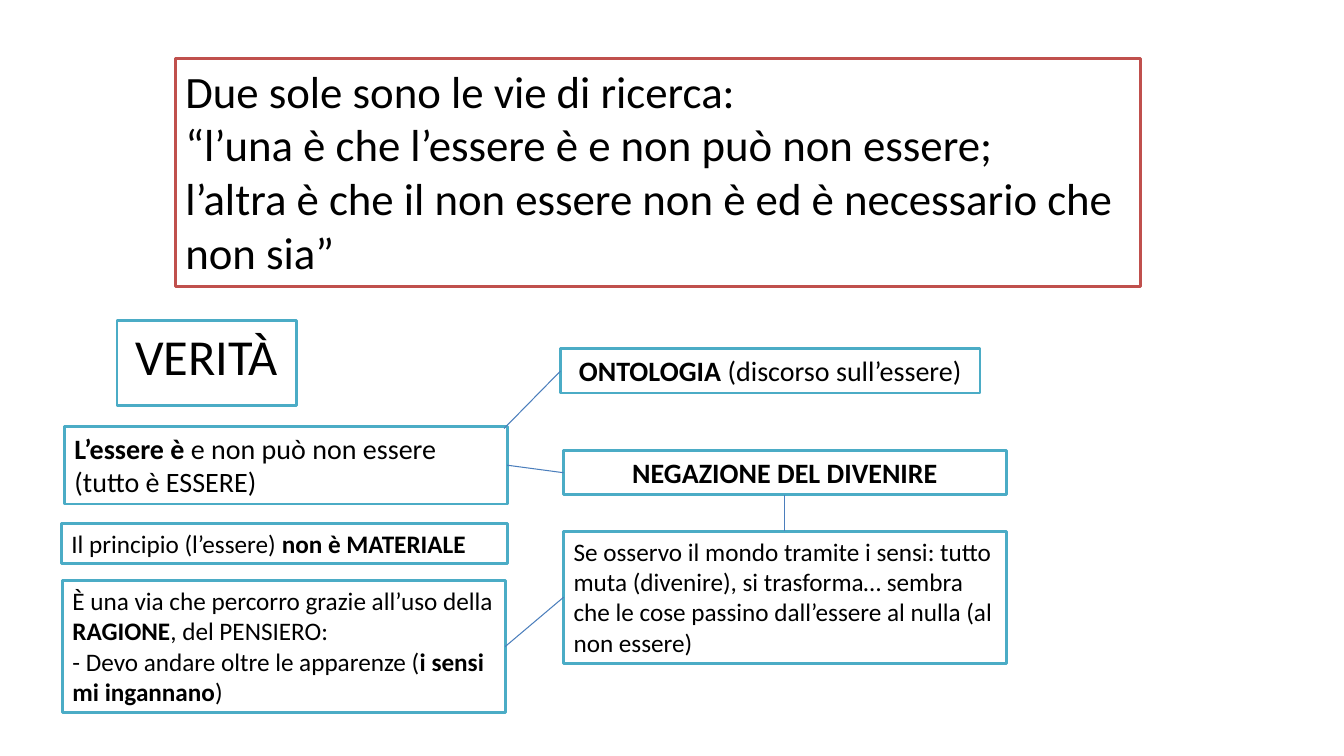
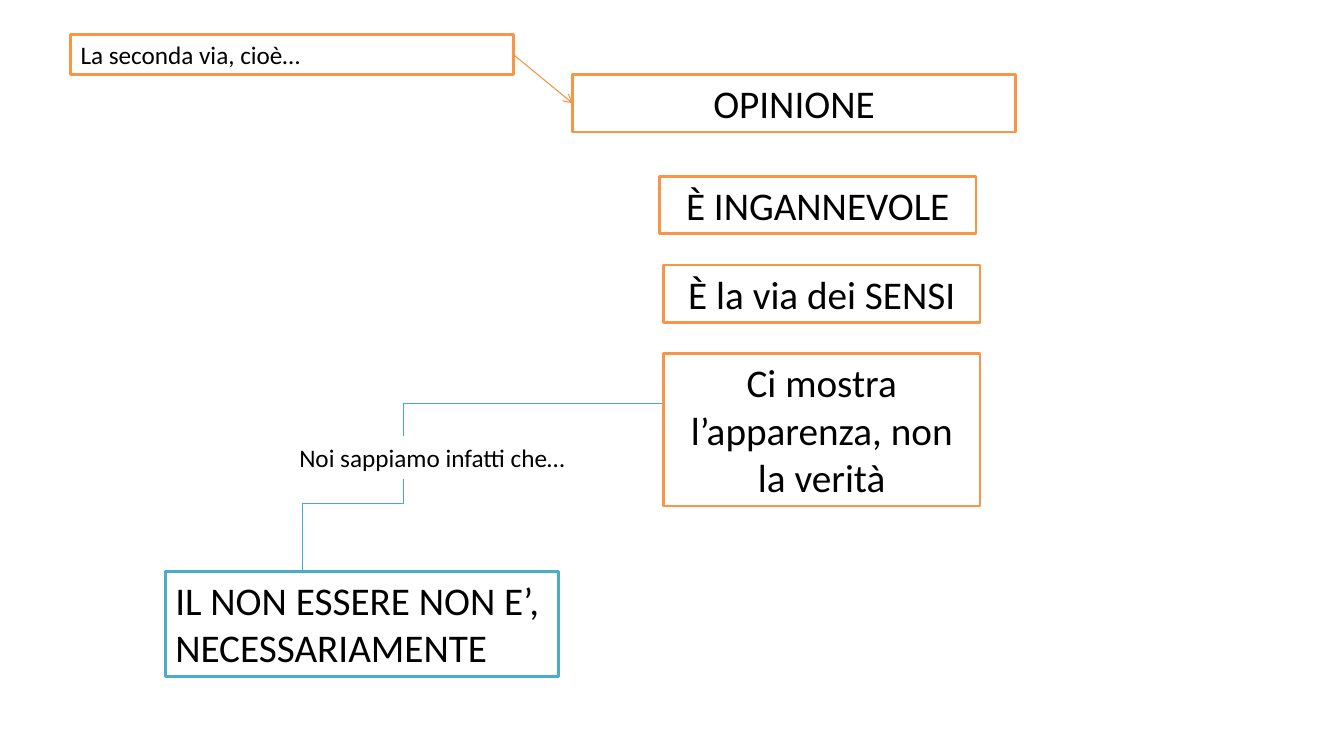
from lxml.etree import SubElement
from pptx import Presentation
from pptx.dml.color import RGBColor
from pptx.enum.shapes import MSO_CONNECTOR, MSO_SHAPE
from pptx.enum.text import MSO_ANCHOR, MSO_AUTO_SIZE, PP_ALIGN
from pptx.oxml.ns import qn
from pptx.util import Inches, Pt

FONT = "Calibri"
BLACK = RGBColor(0x00, 0x00, 0x00)
WHITE = RGBColor(0xFF, 0xFF, 0xFF)
RED = RGBColor(0xC0, 0x50, 0x4D)
TEAL = RGBColor(0x4B, 0xAC, 0xC6)
ORANGE = RGBColor(0xF7, 0x96, 0x46)
LINK_BLUE = RGBColor(0x4B, 0x7E, 0xBC)
LINK_TEAL = RGBColor(0x46, 0xAA, 0xC5)
LINK_ORANGE = RGBColor(0xF6, 0x92, 0x40)

TOP, LEFT, BOTTOM, RIGHT = range(4)


def add_text(tf, text, size=18, align=PP_ALIGN.LEFT):
    """Write one paragraph per line; ** switches bold on and off."""
    for i, line in enumerate(text.split("\n")):
        p = tf.add_paragraph() if i else tf.paragraphs[0]
        p.alignment = align
        for j, part in enumerate(line.split("**")):
            if part:
                r = p.add_run()
                r.text = part
                r.font.name = FONT
                r.font.size = Pt(size)
                r.font.bold = j % 2 == 1
                r.font.color.rgb = BLACK


def add_box(slide, left, top, width, height, text, color=TEAL, grow=True, **fmt):
    sp = slide.shapes.add_shape(MSO_SHAPE.RECTANGLE, Inches(left), Inches(top),
                                Inches(width), Inches(height))
    sp.shadow.inherit = False
    sp.fill.solid()
    sp.fill.fore_color.rgb = WHITE
    sp.line.color.rgb = color
    sp.line.width = Pt(2)
    tf = sp.text_frame
    tf.word_wrap = True
    tf.vertical_anchor = MSO_ANCHOR.TOP
    tf.auto_size = MSO_AUTO_SIZE.SHAPE_TO_FIT_TEXT if grow else MSO_AUTO_SIZE.NONE
    add_text(tf, text, **fmt)
    return sp


def style_line(sp, color, arrow=False):
    sp.line.color.rgb = color
    sp.line.width = Pt(0.75)
    if arrow:
        SubElement(sp.line._get_or_add_ln(), qn("a:tailEnd"), type="arrow")


def add_link(slide, begin, end, color=LINK_BLUE, arrow=False):
    """Join two (box, side) ends; begin may be an (x, y) point in inches."""
    cxn = slide.shapes.add_connector(MSO_CONNECTOR.STRAIGHT, 0, 0, 0, 0)
    if isinstance(begin[0], (int, float)):
        cxn.begin_x, cxn.begin_y = Inches(begin[0]), Inches(begin[1])
    else:
        cxn.begin_connect(*begin)
    cxn.end_connect(*end)
    style_line(cxn, color, arrow)
    SubElement(cxn._element.spPr, qn("a:effectLst"))


def bezier(p0, p1, p2, p3, steps=30):
    """Points along a cubic curve, both ends included."""
    points = []
    for i in range(steps + 1):
        t = i / steps
        weights = ((1 - t) ** 3, 3 * t * (1 - t) ** 2, 3 * t * t * (1 - t), t ** 3)
        points.append(tuple(sum(w * c for w, c in zip(weights, axis))
                            for axis in zip(p0, p1, p2, p3)))
    return points


def add_curve(slide, left, top):
    curve = (bezier((3.35, 0.18), (2.82, 0.09), (2.28, 0), (1.72, 0.34))
             + bezier((1.72, 0.34), (1.16, 0.67), (0, 2.19), (0, 2.19))[1:])
    points = [(left + x, top + y) for x, y in curve]
    builder = slide.shapes.build_freeform(*points[0], scale=Inches(1))
    builder.add_line_segments(points[1:], close=False)
    sp = builder.convert_to_shape()
    sp.shadow.inherit = False
    sp.fill.background()
    style_line(sp, LINK_TEAL, arrow=True)


def truth_column(slide, left, top):
    add_box(slide, left + 0.55, top, 1.78, 0.84, "VERITÀ", grow=False,
            size=36, align=PP_ALIGN.CENTER)
    being = add_box(slide, left + 0.03, top + 1.05, 4.39, 0.77,
                    "**L’essere è** e non può non essere\n(tutto è ESSERE)", size=20)
    add_box(slide, left, top + 2.01, 4.42, 0.4,
            "Il principio (l’essere) **non è MATERIALE**")
    reason = add_box(slide, left + 0.01, top + 2.58, 4.39, 1.31,
                     "È una via che percorro grazie all’uso della **RAGIONE**, "
                     "del PENSIERO:\n"
                     "- Devo andare oltre le apparenze (**i sensi mi ingannano**)")
    return being, reason


def consequences_column(slide, left, top):
    ontology = add_box(slide, left, top, 4.16, 0.44,
                       "**ONTOLOGIA **(discorso sull’essere)",
                       size=20, align=PP_ALIGN.CENTER)
    denial = add_box(slide, left + 0.03, top + 1.01, 4.39, 0.44,
                     "**NEGAZIONE DEL DIVENIRE**", size=20, align=PP_ALIGN.CENTER)
    senses = add_box(slide, left + 0.03, top + 1.81, 4.39, 1.31,
                     "Se osservo il mondo tramite i sensi: tutto muta (divenire), "
                     "si trasforma… sembra che le cose passino dall’essere al nulla "
                     "(al non essere)")
    return ontology, denial, senses


def truth_slide(slide):
    add_box(slide, 1.74, 0.58, 9.57, 2.26,
            "Due sole sono le vie di ricerca:\n"
            "“l’una è che l’essere è e non può non essere;\n"
            "l’altra è che il non essere non è ed è necessario che non sia”",
            color=RED, size=32)
    being, reason = truth_column(slide, 0.61, 3.18)
    ontology, denial, senses = consequences_column(slide, 5.56, 3.46)
    add_link(slide, (5.0, 4.25), (ontology, LEFT))
    add_link(slide, (being, RIGHT), (denial, LEFT))
    add_link(slide, (denial, BOTTOM), (senses, TOP))
    add_link(slide, (reason, RIGHT), (senses, LEFT))


def opinion_traits(slide, left, top, pitch=0.88):
    traits = [("È INGANNEVOLE", 0, 0.57),
              ("È la via dei SENSI", 0.04, 0.57),
              ("Ci mostra l’apparenza, non la verità", 0.04, 1.51)]
    for i, (text, indent, height) in enumerate(traits):
        add_box(slide, left + indent, top + i * pitch, 3.14, height, text,
                color=ORANGE, size=28, align=PP_ALIGN.CENTER)


def opinion_slide(slide):
    add_curve(slide, 3.28, 3.51)
    second_way = add_box(slide, 0.7, 0.34, 4.39, 0.4, "La seconda via, cioè…",
                         color=ORANGE)
    opinion = add_box(slide, 5.68, 0.74, 4.39, 0.57, "OPINIONE", color=ORANGE,
                      size=28, align=PP_ALIGN.CENTER)
    add_link(slide, (second_way, RIGHT), (opinion, LEFT), LINK_ORANGE, arrow=True)
    opinion_traits(slide, 6.54, 1.75)
    add_box(slide, 1.64, 5.67, 3.9, 1.04, "IL NON ESSERE NON E’, NECESSARIAMENTE",
            size=28)
    add_box(slide, 2.87, 4.34, 2.93, 0.4, "Noi sappiamo infatti che…", color=WHITE)


def main():
    prs = Presentation()
    prs.slide_width, prs.slide_height = Inches(13.33), Inches(7.5)
    for build in (truth_slide, opinion_slide):
        build(prs.slides.add_slide(prs.slide_layouts[6]))
    prs.save("out.pptx")


if __name__ == "__main__":
    main()
